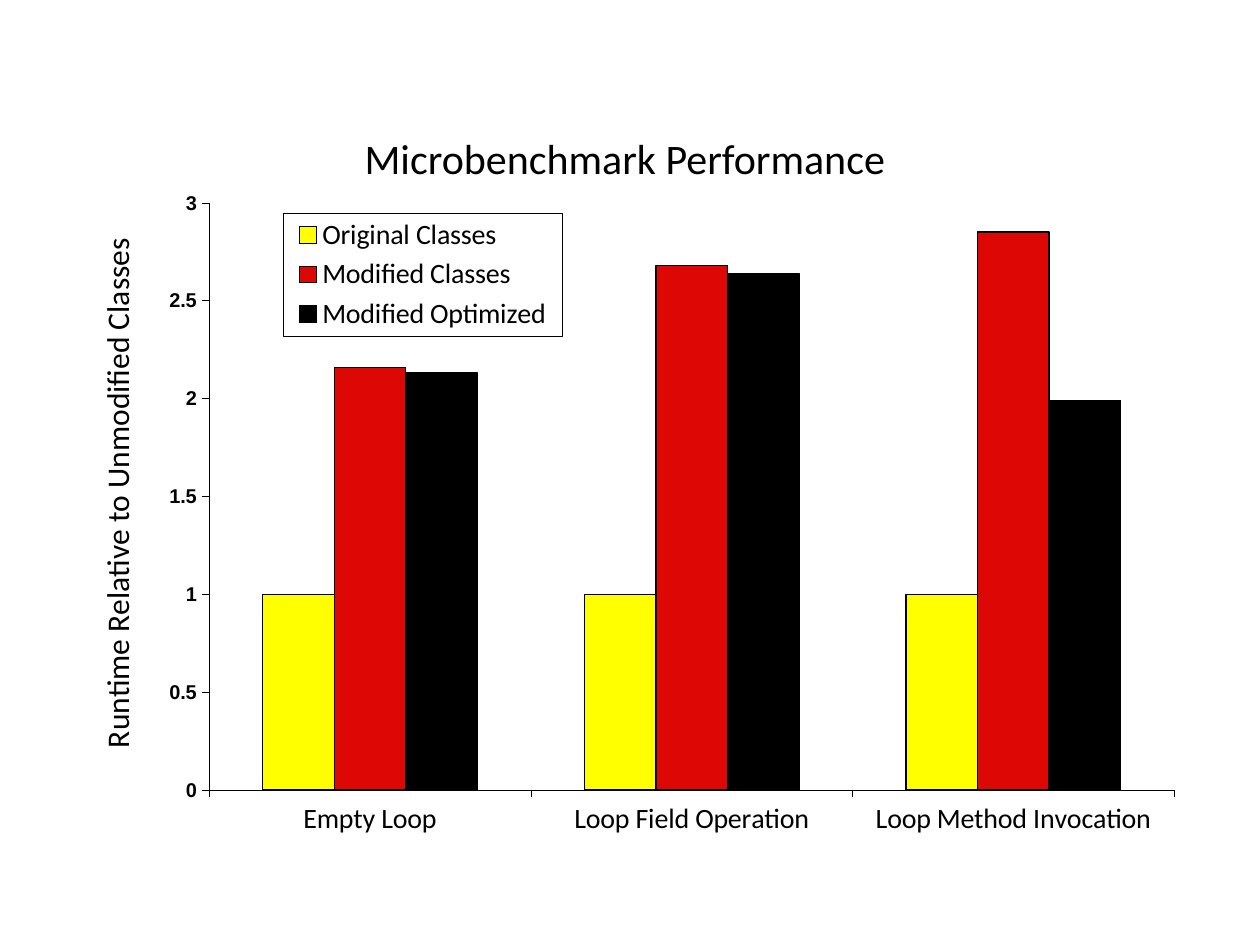
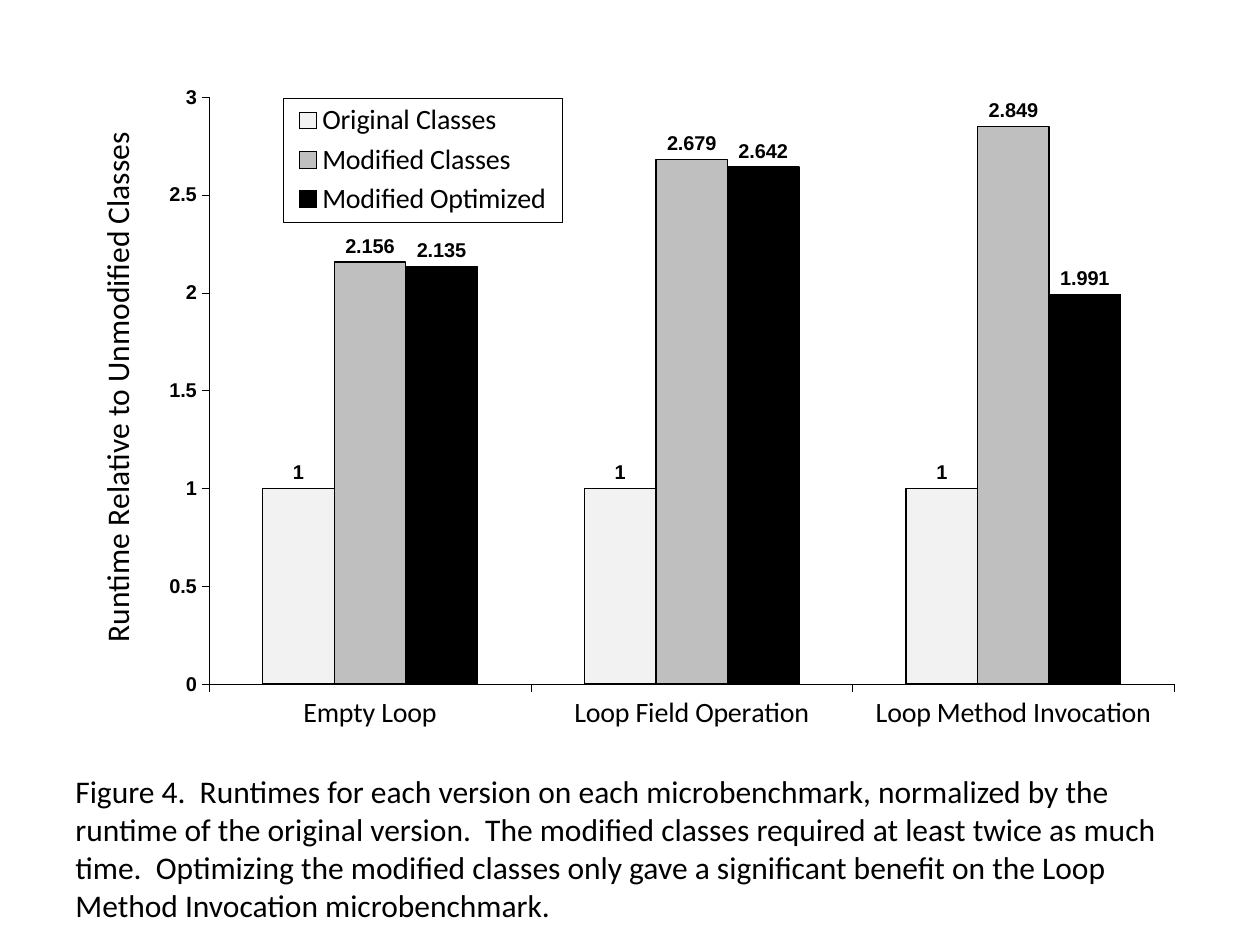
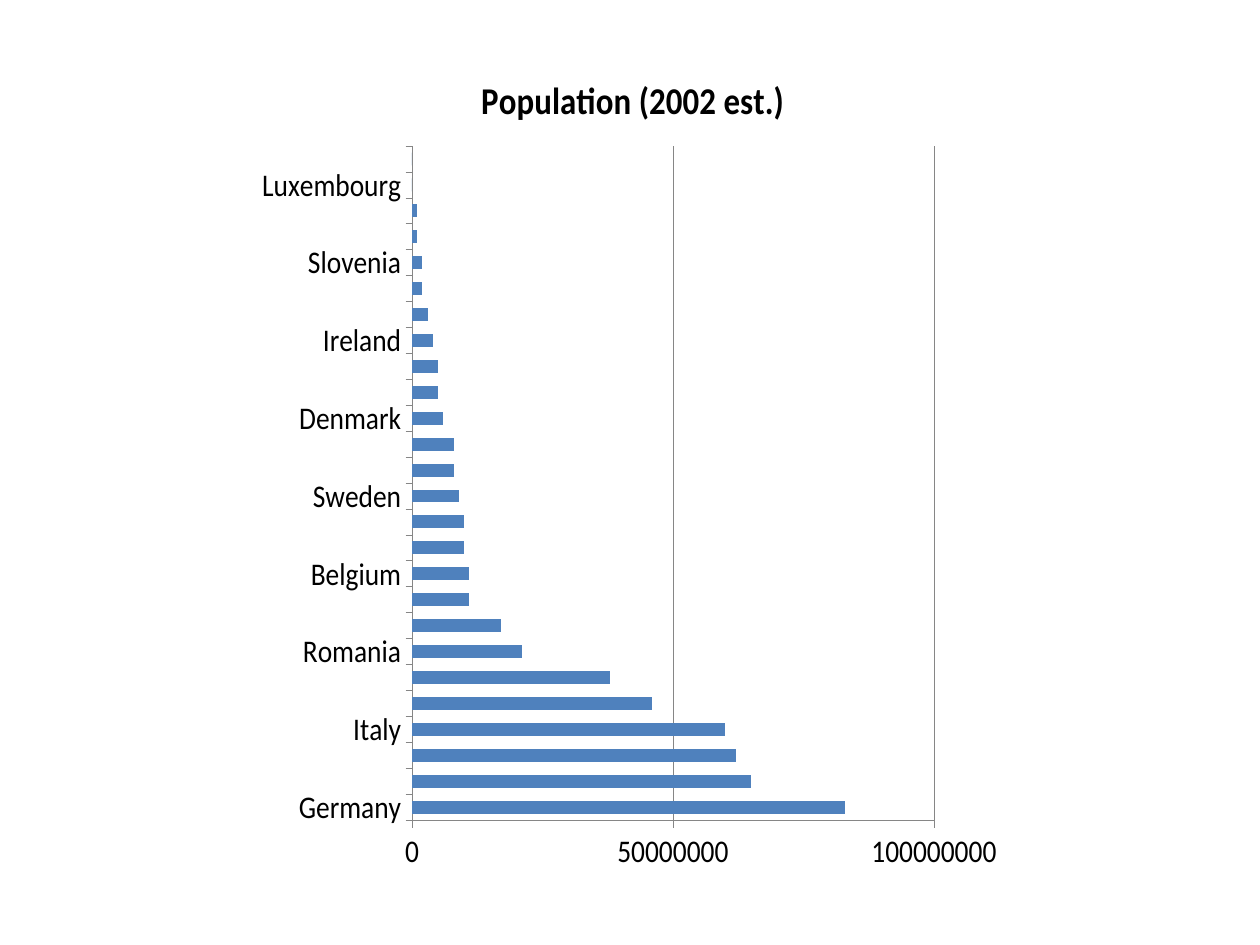
from lxml import etree
from pptx import Presentation
from pptx.chart.data import CategoryChartData
from pptx.dml.color import RGBColor
from pptx.enum.chart import (
    XL_CHART_TYPE, XL_LABEL_POSITION, XL_LEGEND_POSITION, XL_TICK_MARK)
from pptx.enum.text import PP_ALIGN
from pptx.oxml import parse_xml
from pptx.oxml.ns import nsdecls, qn
from pptx.util import Inches, Pt

COLUMNS = XL_CHART_TYPE.COLUMN_CLUSTERED
STACKED_BARS = XL_CHART_TYPE.BAR_STACKED
OUTSIDE_END = XL_LABEL_POSITION.OUTSIDE_END
LEGEND_RIGHT = XL_LEGEND_POSITION.RIGHT
TICK_OUTSIDE = XL_TICK_MARK.OUTSIDE
CENTER = PP_ALIGN.CENTER

BLACK = RGBColor(0x00, 0x00, 0x00)
WHITE = RGBColor(0xFF, 0xFF, 0xFF)
YELLOW = RGBColor(0xFF, 0xFF, 0x00)
RED = RGBColor(0xDD, 0x08, 0x06)
PALE_GRAY = RGBColor(0xF2, 0xF2, 0xF2)
MID_GRAY = RGBColor(0xBF, 0xBF, 0xBF)
AXIS_GRAY = RGBColor(0x86, 0x86, 0x86)
BLUE = RGBColor(0x4F, 0x81, 0xBD)

BODY_FONT = "Calibri"
NUMBER_FONT = "Arial"

# Chart sizes in inches
RUNTIME_SIZE = (8.83, 5.92)
POPULATION_SIZE = (5.83, 7)

BENCHMARKS = ["Empty Loop", "Loop Field Operation", "Loop Method Invocation"]
RUNTIMES = {
    "Original Classes": (1, 1, 1),
    "Modified Classes": (2.156, 2.679, 2.849),
    "Modified Optimized": (2.135, 2.642, 1.991),
}
CAPTION = (
    "Figure 4.  Runtimes for each version on each microbenchmark, normalized "
    "by the runtime of the original version.  The modified classes required "
    "at least twice as much time.  Optimizing the modified classes only gave "
    "a significant benefit on the Loop Method Invocation microbenchmark.")

POPULATION_TITLE = "Population (2002 est.)"
POPULATION_MILLIONS = {
    "Germany": 83, "France": 65, "U.K.": 62, "Italy": 60, "Spain": 46,
    "Poland": 38, "Romania": 21, "Netherlands": 17, "Portugal": 11,
    "Belgium": 11, "Czech Republic": 10, "Hungary": 10, "Sweden": 9,
    "Austria": 8, "Bulgaria": 8, "Denmark": 6, "Slovakia": 5, "Finland": 5,
    "Ireland": 4, "Lithuania": 3, "Latvia": 2, "Slovenia": 2, "Estonia": 1,
    "Cyprus": 1, "Luxembourg": 0, "Malta": 0,
}


def set_font(font, size, name=BODY_FONT, bold=False):
    font.size = Pt(size)
    font.name = name
    font.bold = bold
    font.color.rgb = BLACK


def set_line(line, color, width):
    line.color.rgb = color
    line.width = Pt(width)


def set_fill(fill, color):
    fill.solid()
    fill.fore_color.rgb = color


def set_layout(element, index, chart_size, place, inner=False):
    """Place a chart part, given in inches from the chart's corner."""
    for old in element.findall(qn("c:layout")):
        element.remove(old)
    layout = parse_xml(f"<c:layout {nsdecls('c')}><c:manualLayout/></c:layout>")
    values = {"layoutTarget": "inner"} if inner else {}
    values.update(xMode="edge", yMode="edge")
    for tag, length, whole in zip("xywh", place, chart_size * 2):
        values[tag] = length / whole
    for tag, value in values.items():
        etree.SubElement(layout[0], qn(f"c:{tag}")).set("val", str(value))
    element.insert(index, layout)


def add_text(slide, text, left, top, width, height, size, alignment=None):
    box = slide.shapes.add_textbox(
        Inches(left), Inches(top), Inches(width), Inches(height))
    box.text_frame.word_wrap = True
    paragraph = box.text_frame.paragraphs[0]
    paragraph.text = text
    paragraph.alignment = alignment
    set_font(paragraph.font, size)


def add_chart(slide, kind, categories, series, corner, size, plot_place):
    data = CategoryChartData()
    data.categories = categories
    for name, values in series.items():
        data.add_series(name, values)
    place = map(Inches, corner + size)
    chart = slide.shapes.add_chart(kind, *place, data).chart
    chart.has_title = False
    chart.has_legend = False
    chart.plots[0].vary_by_categories = False
    set_layout(chart._chartSpace.chart.plotArea, 0, size, plot_place, inner=True)
    return chart


def style_axis(axis, size, color, width, **font):
    axis.has_major_gridlines = False
    axis.major_tick_mark = TICK_OUTSIDE
    set_line(axis.format.line, color, width)
    set_font(axis.tick_labels.font, size, **font)


def set_scale(axis, maximum, step):
    axis.minimum_scale = 0
    axis.maximum_scale = maximum
    axis.major_unit = step


def add_axis_title(axis, text):
    frame = axis.axis_title.text_frame
    frame.text = text
    set_font(frame.paragraphs[0].font, 18)
    frame._txBody.bodyPr.set("rot", "-5400000")
    set_layout(axis.axis_title._element, 1, RUNTIME_SIZE, (0.13, 0.87))


def add_legend(chart, top):
    chart.has_legend = True
    legend = chart.legend
    legend.position = LEGEND_RIGHT
    legend.include_in_layout = False
    set_font(legend.font, 16)
    set_layout(legend._element, 1, RUNTIME_SIZE, (1.67, top, 2.21, 0.98))
    box = parse_xml(
        f"<c:spPr {nsdecls('c', 'a')}>"
        f'<a:solidFill><a:srgbClr val="{WHITE}"/></a:solidFill>'
        f'<a:ln w="{Pt(0.19)}"><a:solidFill><a:srgbClr val="{BLACK}"/>'
        "</a:solidFill></a:ln></c:spPr>")
    legend._element.find(qn("c:txPr")).addprevious(box)


def add_runtime_chart(slide, top, colors, digits, legend_top, show_values=False):
    runtimes = {name: [round(value, digits) for value in values]
                for name, values in RUNTIMES.items()}
    chart = add_chart(slide, COLUMNS, BENCHMARKS, runtimes, (0.58, top),
                      RUNTIME_SIZE, (1.08, 0.69, 7.66, 4.66))
    set_font(chart.font, 11.4, NUMBER_FONT, bold=True)
    plot = chart.plots[0]
    plot.gap_width = 150
    for series, color in zip(plot.series, colors):
        set_fill(series.format.fill, color)
        set_line(series.format.line, BLACK, 0.77)
        if show_values:
            labels = series.data_labels
            labels.show_value = True
            labels.position = OUTSIDE_END
            set_font(labels.font, 11.4, NUMBER_FONT, bold=True)
    style_axis(chart.category_axis, 16, BLACK, 0.19)
    style_axis(chart.value_axis, 11.4, BLACK, 0.19, name=NUMBER_FONT, bold=True)
    set_scale(chart.value_axis, 3, 0.5)
    add_axis_title(chart.value_axis, "Runtime Relative to Unmodified Classes ")
    add_legend(chart, legend_top)


def add_population_chart(slide):
    people = [value * 1_000_000 for value in POPULATION_MILLIONS.values()]
    chart = add_chart(slide, STACKED_BARS, list(POPULATION_MILLIONS),
                      {POPULATION_TITLE: people}, (2.08, 0.33),
                      POPULATION_SIZE, (0.9, 0.83, 4.76, 5.35))
    set_font(chart.font, 18)
    chart.has_title = True
    title = chart.chart_title.text_frame
    title.text = POPULATION_TITLE
    set_font(title.paragraphs[0].font, 21.6, bold=True)
    plot = chart.plots[0]
    plot.gap_width = 100
    plot.overlap = 100
    set_fill(plot.series[0].format.fill, BLUE)
    value_axis = chart.value_axis
    for axis in (chart.category_axis, value_axis):
        style_axis(axis, 18, AXIS_GRAY, 0.5)
    set_line(value_axis.major_gridlines.format.line, AXIS_GRAY, 0.5)
    set_scale(value_axis, 100_000_000, 50_000_000)


def main():
    presentation = Presentation()
    presentation.slide_width = Inches(10)
    presentation.slide_height = Inches(7.5)
    blank = presentation.slide_layouts[6]

    # Runtimes in colour
    slide = presentation.slides.add_slide(blank)
    add_runtime_chart(slide, 0.92, (YELLOW, RED, BLACK), 2, 0.77)
    add_text(slide, "Microbenchmark Performance", 2.75, 1, 4.42, 0.5, 24, CENTER)

    # Runtimes in gray, with values and a caption
    slide = presentation.slides.add_slide(blank)
    add_runtime_chart(slide, 0.08, (PALE_GRAY, MID_GRAY, BLACK), 3, 0.7,
                      show_values=True)
    add_text(slide, CAPTION, 0.5, 6.08, 9, 1.31, 18)

    # Population by country
    slide = presentation.slides.add_slide(blank)
    add_population_chart(slide)

    presentation.save("out.pptx")


if __name__ == "__main__":
    main()
